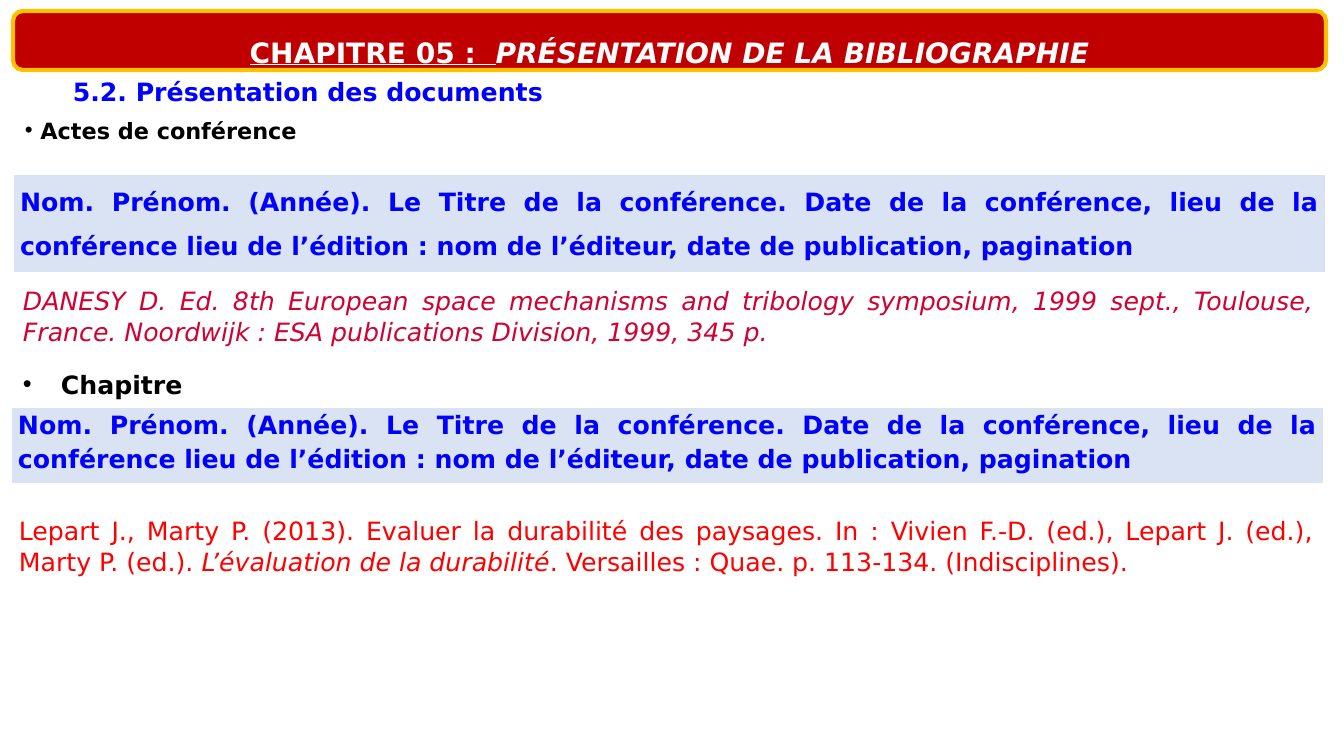
from dataclasses import dataclass

from lxml import etree
from pptx import Presentation
from pptx import util as u
from pptx.dml.color import RGBColor
from pptx.enum import shapes, text
from pptx.oxml import ns

SCALE = 914400 / 100.8
FONT = "DejaVu Sans"
WHITE = RGBColor(0xFF, 0xFF, 0xFF)
BLACK = RGBColor(0, 0, 0)
BLUE = RGBColor(0, 0, 0xFF)
RED = RGBColor(0xFF, 0, 0)
CRIMSON = RGBColor(0xCE, 0x03, 0x33)
DARK_RED = RGBColor(0xC0, 0, 0)
GOLD = RGBColor(0xFF, 0xC0, 0)
PALE_BLUE = RGBColor(0xDA, 0xE3, 0xF3)
JUSTIFY = text.PP_ALIGN.JUSTIFY
CENTER = text.PP_ALIGN.CENTER
TOP = text.MSO_ANCHOR.TOP
MIDDLE = text.MSO_ANCHOR.MIDDLE
BORDERS = (("a:lnL", 1), ("a:lnR", 1), ("a:lnT", 1), ("a:lnB", 3))
REFERENCE_PATTERN = (
    "Nom. Prénom. (Année). Le Titre de la conférence. Date de la conférence, "
    "lieu de la conférence lieu de l’édition : nom de l’éditeur, "
    "date de publication, pagination"
)


@dataclass(frozen=True)
class Box:
    """Position and size in px."""

    left: int
    top: int
    width: int
    height: int

    def emu(self) -> tuple[u.Emu, ...]:
        """Return the four lengths in EMU."""
        return tuple(px(n) for n in (self.left, self.top, self.width, self.height))


@dataclass(frozen=True)
class Run:
    """A stretch of text with its own emphasis."""

    content: str
    bold: bool = False
    italic: bool = False
    underline: bool = False


def px(length: int) -> u.Emu:
    """Turn px into EMU."""
    return u.Emu(round(length * SCALE))


def write(frame, *runs: Run, color: RGBColor, size: int = 18, align=None,
          spacing: float | None = None, level: int = 0, margin: int = 0,
          hanging: int = 0, bullet: str = "") -> None:
    """Write one paragraph of formatted runs."""
    paragraph = frame.paragraphs[0]
    paragraph.alignment = align
    paragraph.level = level
    if spacing:
        paragraph.line_spacing = spacing
    properties = paragraph._p.get_or_add_pPr()
    properties.set("marL", str(px(margin)))
    properties.set("indent", str(px(-hanging)))
    if bullet:
        font = etree.SubElement(properties, ns.qn("a:buFont"))
        font.set("typeface", "Arial")
        etree.SubElement(properties, ns.qn("a:buChar")).set("char", bullet)
    for item in runs:
        run = paragraph.add_run()
        run.text = item.content
        run.font.name = FONT
        run.font.size = u.Pt(size)
        run.font.color.rgb = color
        run.font.bold = item.bold
        run.font.italic = item.italic
        run.font.underline = item.underline


def add_label(slide, box: Box, *runs: Run, wrap: bool = False,
              anchor=TOP, **style) -> None:
    """Add a text box that grows with its text."""
    frame = slide.shapes.add_textbox(*box.emu()).text_frame
    frame.word_wrap = wrap
    frame.auto_size = text.MSO_AUTO_SIZE.SHAPE_TO_FIT_TEXT
    frame.vertical_anchor = anchor
    write(frame, *runs, **style)


def add_pattern(slide, box: Box, spacing: float) -> None:
    """Add the one-cell table that holds the reference pattern."""
    table = slide.shapes.add_table(1, 1, *box.emu()).table
    table.first_row = table.horz_banding = False
    cell = table.cell(0, 0)
    cell.margin_left = cell.margin_right = px(7)
    cell.margin_top = cell.margin_bottom = 0
    cell.fill.solid()
    cell.fill.fore_color.rgb = PALE_BLUE
    properties = cell._tc.get_or_add_tcPr()
    for index, (tag, width) in enumerate(BORDERS):
        line = etree.Element(ns.qn(tag), w=str(u.Pt(width)))
        fill = etree.SubElement(line, ns.qn("a:solidFill"))
        etree.SubElement(fill, ns.qn("a:srgbClr")).set("val", str(WHITE))
        properties.insert(index, line)
    write(cell.text_frame, Run(REFERENCE_PATTERN, bold=True),
          color=BLUE, align=JUSTIFY, spacing=spacing)


def add_banner(slide, box: Box) -> None:
    """Add the chapter title on its rounded banner."""
    shape = slide.shapes.add_shape(
        shapes.MSO_SHAPE.FLOWCHART_ALTERNATE_PROCESS, *box.emu())
    shape.shadow.inherit = False
    shape.fill.solid()
    shape.fill.fore_color.rgb = DARK_RED
    shape.line.color.rgb = GOLD
    shape.line.width = u.Pt(3)
    frame = shape.text_frame
    frame.word_wrap = True
    frame.auto_size = text.MSO_AUTO_SIZE.SHAPE_TO_FIT_TEXT
    frame.vertical_anchor = TOP
    write(frame, Run("CHAPITRE 05 :  ", bold=True, underline=True),
          Run("PRÉSENTATION DE LA BIBLIOGRAPHIE", bold=True, italic=True),
          color=WHITE, size=20, align=CENTER, spacing=1.5)


def main() -> None:
    """Build the slide and save it."""
    presentation = Presentation()
    presentation.slide_width, presentation.slide_height = px(1344), px(756)
    slide = presentation.slides.add_slide(presentation.slide_layouts[6])
    add_banner(slide, Box(13, 11, 1313, 59))
    add_label(slide, Box(13, 71, 542, 40),
              Run("5.2. Présentation des documents", bold=True),
              color=BLUE, level=1, margin=50)
    add_pattern(slide, Box(13, 174, 1313, 100), 1.5)
    add_label(slide, Box(15, 112, 296, 37), Run(" Actes de conférence", bold=True),
              color=BLACK, size=16, bullet="•")
    add_label(slide, Box(13, 280, 1311, 72),
              Run("DANESY D. Ed. 8th European space mechanisms and tribology "
                  "symposium, 1999 sept., Toulouse, France. Noordwijk : ESA "
                  "publications Division, 1999, 345 p.", italic=True),
              wrap=True, anchor=MIDDLE, color=CRIMSON, align=JUSTIFY)
    add_label(slide, Box(13, 349, 332, 49), Run("Chapitre", bold=True),
              wrap=True, color=BLACK, align=JUSTIFY, spacing=1.5,
              margin=38, hanging=38, bullet="•")
    add_label(slide, Box(9, 510, 1315, 72),
              Run("Lepart J., Marty P. (2013). Evaluer la durabilité des paysages. "
                  "In : Vivien F.-D. (ed.), Lepart J. (ed.), Marty P. (ed.). "),
              Run("L’évaluation de la durabilité", italic=True),
              Run(". Versailles : Quae. p. 113-134. (Indisciplines)."),
              wrap=True, anchor=MIDDLE, color=RED, align=JUSTIFY)
    add_pattern(slide, Box(11, 407, 1313, 78), 1.15)
    presentation.save("out.pptx")


if __name__ == "__main__":
    main()
